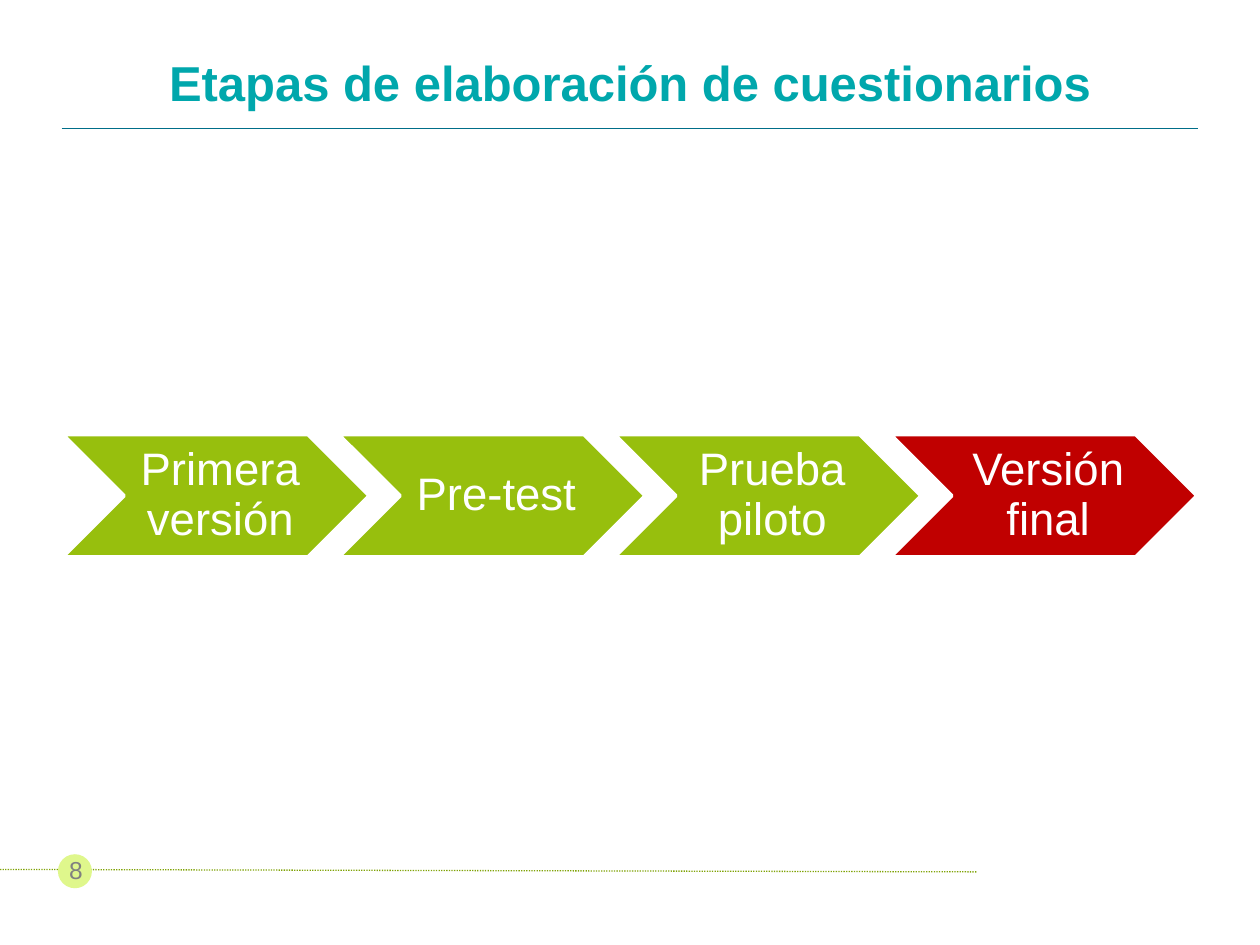
from pptx import Presentation
from pptx.dml.color import RGBColor
from pptx.enum.dml import MSO_LINE
from pptx.enum.shapes import MSO_CONNECTOR, MSO_SHAPE
from pptx.enum.text import MSO_ANCHOR, PP_ALIGN
from pptx.oxml.ns import qn
from pptx.util import Inches, Pt
from lxml import etree

STRAIGHT = MSO_CONNECTOR.STRAIGHT
CHEVRON, OVAL = MSO_SHAPE.CHEVRON, MSO_SHAPE.OVAL
MIDDLE = MSO_ANCHOR.MIDDLE
LEFT, CENTER = PP_ALIGN.LEFT, PP_ALIGN.CENTER
DOTTED = MSO_LINE.ROUND_DOT

WHITE = RGBColor(0xFF, 0xFF, 0xFF)
TEAL = RGBColor(0x00, 0xA7, 0xAC)
DARK_TEAL = RGBColor(0x00, 0x6E, 0x89)
GREEN = RGBColor(0x97, 0xBF, 0x0D)
OLIVE = RGBColor(0x81, 0xA4, 0x08)
LIME = RGBColor(0xDF, 0xF7, 0x8C)
RED = RGBColor(0xC0, 0x00, 0x00)
GRAY = RGBColor(0x80, 0x80, 0x80)


def write(box, text, size, color, align=CENTER, bold=False, spacing=1.0):
    frame = box.text_frame
    frame.word_wrap = True
    frame.vertical_anchor = MIDDLE
    paragraph = frame.paragraphs[0]
    paragraph.alignment = align
    paragraph.line_spacing = spacing
    span = paragraph.add_run()
    span.text = text
    span.font.name = "Arial"
    span.font.size = Pt(size)
    span.font.bold = bold
    span.font.color.rgb = color


def add_rule(page, start, end, color, dash=None):
    rule = page.shapes.add_connector(STRAIGHT, *map(Inches, start + end))
    rule.line.color.rgb = color
    rule.line.width = Pt(0.75)
    if dash is not None:
        rule.line.dash_style = dash
    etree.SubElement(rule._element.spPr, qn("a:effectLst"))


deck = Presentation()
deck.slide_width, deck.slide_height = Inches(10), Inches(7.5)
page = deck.slides.add_slide(deck.slide_layouts[5])

# Title and the rule below it
title = page.shapes.title
title.left, title.top = Inches(0.5), Inches(0.3)
title.width, title.height = Inches(9), Inches(0.7)
write(title, "Etapas de elaboración de cuestionarios", 28, TEAL, bold=True)
add_rule(page, (0.49, 1.02), (9.51, 1.02), DARK_TEAL)

# Footer with the page number
add_rule(page, (0, 6.9), (7.75, 6.92), OLIVE, dash=DOTTED)
badge = page.shapes.add_shape(OVAL, Inches(0.46), Inches(6.78), Inches(0.27), Inches(0.27))
badge.shadow.inherit = False
badge.fill.solid()
badge.fill.fore_color.rgb = LIME
badge.line.fill.background()
number = page.shapes.add_textbox(Inches(0.45), Inches(6.7), Inches(2.33), Inches(0.4))
write(number, "8", 14, GRAY, align=LEFT)

# Process stages, one chevron per column
stages = [("Primera versión", GREEN), ("Pre-test", GREEN),
          ("Prueba piloto", GREEN), ("Versión final", RED)]
first_left, stage_width = 0.5, 2.43
column = (9 - stage_width) / (len(stages) - 1)
for index, (label, color) in enumerate(stages):
    stage = page.shapes.add_shape(CHEVRON, Inches(first_left + index * column),
                                  Inches(3.45), Inches(stage_width), Inches(0.97))
    stage.shadow.inherit = False
    stage.fill.solid()
    stage.fill.fore_color.rgb = color
    stage.line.color.rgb = WHITE
    stage.line.width = Pt(2)
    frame = stage.text_frame
    frame.margin_left = Inches(0.11)
    frame.margin_top = frame.margin_right = frame.margin_bottom = Inches(0.04)
    write(stage, label, 26, WHITE, spacing=0.9)

deck.save("out.pptx")
